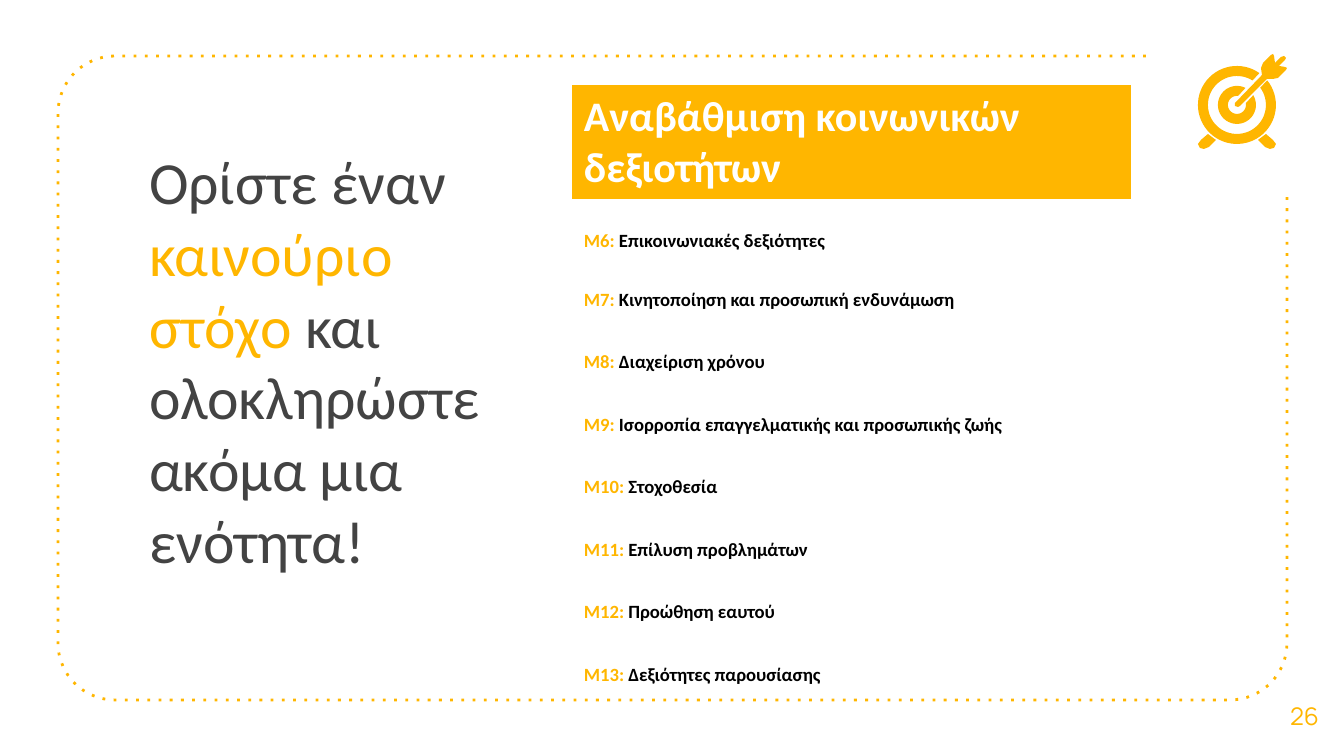
import math

from lxml import etree
from pptx import Presentation
from pptx import util as u
from pptx.dml.color import RGBColor
from pptx.enum import text
from pptx.oxml.ns import qn

# Content
TITLE = [
    ("Ορίστε έναν ", "gray"),
    ("καινούριο στόχο ", "amber"),
    ("και ολοκληρώστε ακόμα μια ενότητα!", "gray"),
]
HEADER = "Αναβάθμιση κοινωνικών δεξιοτήτων"
FIRST_MODULE = 6
MODULES = [
    "Επικοινωνιακές δεξιότητες",
    "Κινητοποίηση και προσωπική ενδυνάμωση",
    "Διαχείριση χρόνου",
    "Ισορροπία επαγγελματικής και προσωπικής ζωής",
    "Στοχοθεσία",
    "Επίλυση προβλημάτων",
    "Προώθηση εαυτού",
    "Δεξιότητες παρουσίασης",
]
PAGE = "26"
COLORS = {"amber": "FFB600", "gray": "434343", "black": "000000", "white": "FFFFFF"}

# Geometry in px
PX = 914400 / 134.4
LEFT, TOP, RIGHT, BOTTOM, RADIUS = 58, 56, 1287, 700, 57
FRAME_START, FRAME_END = (1146, TOP), (RIGHT, 196)
ROW_HEIGHTS = [116, 59] + [62, 63] * 3 + [62]
TARGET = (1237, 105)
RINGS = [(39, 29), (19, 9)]
SLIT_ANGLE, SLIT_HALF = -47, 5.3
FOOT = [(1208, 134), (1201, 140), (1198, 144), (1200, 148), (1204, 149),
        (1209, 147), (1216, 140)]
ARROW = [(1273, 54), (1271, 55), (1263, 63), (1261, 68), (1262, 75), (1235, 103),
         (1235, 106), (1238, 107), (1240, 106), (1267, 79), (1273, 79), (1278, 78),
         (1286, 70), (1287, 68), (1285, 67), (1279, 66), (1285, 60), (1286, 58),
         (1284, 56), (1281, 57), (1275, 63), (1274, 56)]


def px(n):
    return u.Emu(round(n * PX))


def color(name):
    return RGBColor.from_string(COLORS[name])


def arc(center, radius, start, end, steps=16):
    angles = [math.radians(start + (end - start) * i / steps) for i in range(steps + 1)]
    return [(center[0] + radius * math.cos(a), center[1] + radius * math.sin(a))
            for a in angles]


def ring(outer, inner):
    """Ring outline, open where the arrow passes through it."""
    points = []
    for radius, step in ((outer, 1), (inner, -1)):
        gap = math.degrees(math.asin(SLIT_HALF / radius))
        ends = (SLIT_ANGLE + gap, SLIT_ANGLE + 360 - gap)
        points += arc(TARGET, radius, *ends[::step], steps=60)
    return points


def outline(s, points, closed=True):
    emu = [(px(x), px(y)) for x, y in points]
    builder = s.shapes.build_freeform(*emu[0])
    builder.add_line_segments(emu[1:], close=closed)
    sp = builder.convert_to_shape()
    sp.shadow.inherit = False
    if closed:
        sp.fill.solid()
        sp.fill.fore_color.rgb = color("amber")
        sp.line.fill.background()
    else:
        sp.fill.background()
        sp.line.color.rgb = color("amber")
    return sp


def add_runs(p, runs, size, font="Calibri", bold=False):
    for words, name in runs:
        r = p.add_run()
        r.text = words
        r.font.size = u.Pt(size)
        r.font.name = font
        r.font.bold = bold
        r.font.color.rgb = color(name)


def set_margins(box, side, top, bottom):
    box.margin_left = box.margin_right = px(side)
    box.margin_top, box.margin_bottom = px(top), px(bottom)


prs = Presentation()
prs.slide_width, prs.slide_height = px(1344), px(756)
s = prs.slides.add_slide(prs.slide_layouts[5])

# Dotted frame, open at the top right corner
corners = [(LEFT + RADIUS, TOP + RADIUS, 270, 180),
           (LEFT + RADIUS, BOTTOM - RADIUS, 180, 90),
           (RIGHT - RADIUS, BOTTOM - RADIUS, 90, 0)]
frame_points = [FRAME_START]
for x, y, start, end in corners:
    frame_points += arc((x, y), RADIUS, start, end)
frame = outline(s, frame_points + [FRAME_END], closed=False)
frame.line.width = u.Pt(1.5)
etree.SubElement(frame.line._get_or_add_ln(), qn("a:prstDash")).set("val", "dot")

# Title
title = s.shapes.title
title.left, title.top, title.width, title.height = px(136), px(132), px(399), px(126)
tf = title.text_frame
tf.word_wrap = True
tf.auto_size = text.MSO_AUTO_SIZE.NONE
tf.vertical_anchor = text.MSO_ANCHOR.TOP
set_margins(tf, 13, 13, 13)
p = tf.paragraphs[0]
p.alignment = text.PP_ALIGN.LEFT
p.line_spacing = u.Pt(38.4)
add_runs(p, TITLE, 32)

# Page number
number = s.shapes.add_textbox(px(1265), px(675), px(79), px(81))
tf = number.text_frame
tf.word_wrap = True
tf.vertical_anchor = text.MSO_ANCHOR.MIDDLE
set_margins(tf, 13, 13, 13)
p = tf.paragraphs[0]
p.alignment = text.PP_ALIGN.CENTER
add_runs(p, [(PAGE, "amber")], 13, "Manrope")

# Target icon: rings, two mirrored feet, arrow
mirrored_foot = [(2 * TARGET[0] - x, y) for x, y in FOOT]
for points in [ring(*radii) for radii in RINGS] + [FOOT, mirrored_foot, ARROW]:
    outline(s, points)

# Module table
table = s.shapes.add_table(len(ROW_HEIGHTS), 1, px(571), px(84), px(561),
                           px(sum(ROW_HEIGHTS))).table
table.first_row = table.horz_banding = False
rows = [[(HEADER, "white")]]
rows += [[(f"M{n}: ", "amber"), (name, "black")]
         for n, name in enumerate(MODULES, FIRST_MODULE)]
for i, (runs, height) in enumerate(zip(rows, ROW_HEIGHTS)):
    table.rows[i].height = px(height)
    cell = table.cell(i, 0)
    if i == 0:
        cell.fill.solid()
        cell.fill.fore_color.rgb = color("amber")
    else:
        cell.fill.background()
    set_margins(cell, 13, 30 if i else 7, 6)
    add_runs(cell.text_frame.paragraphs[0], runs, 10 if i else 22.5, bold=True)

prs.save("out.pptx")
